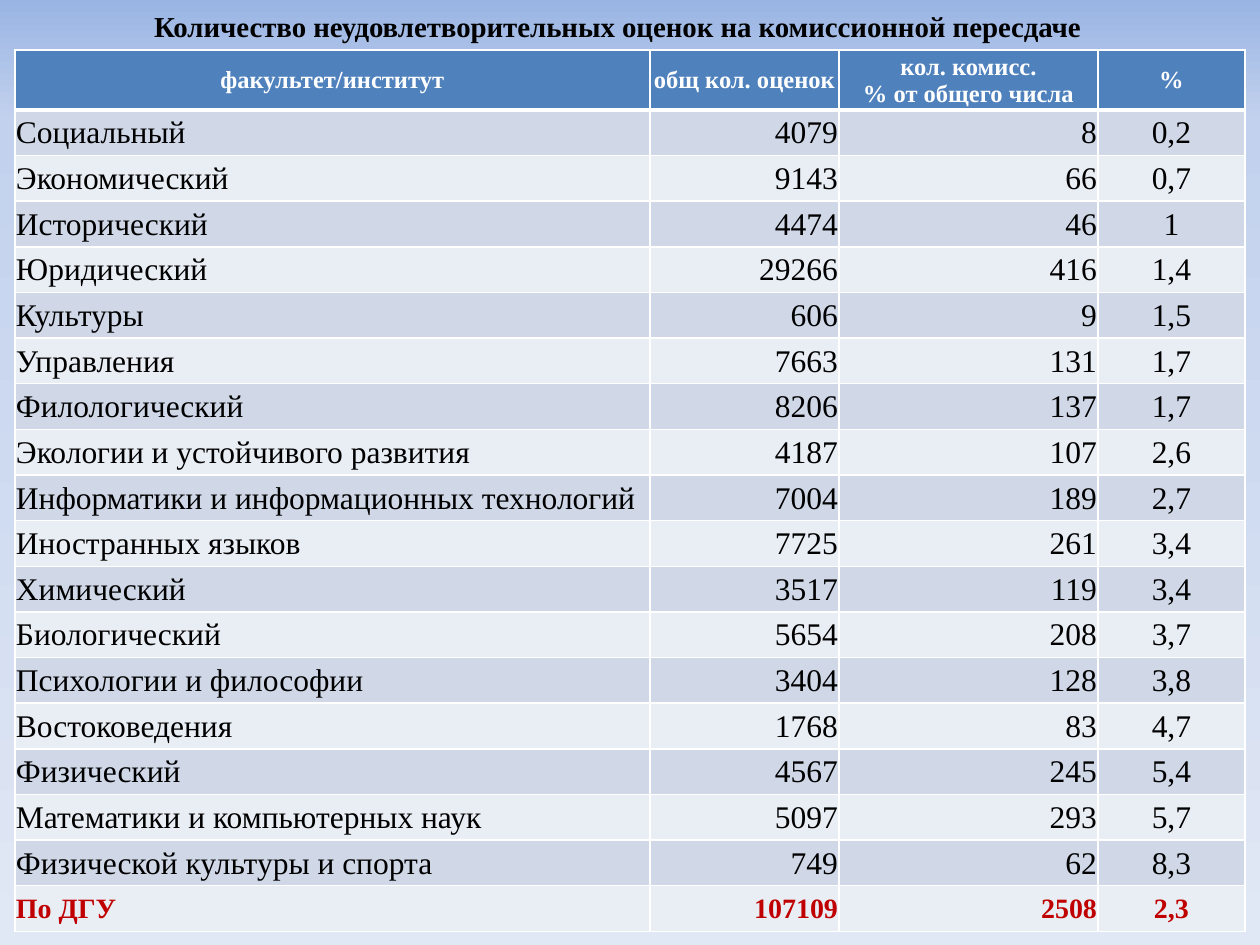
from copy import deepcopy
from dataclasses import dataclass

from lxml.etree import SubElement
from pptx import Presentation
from pptx.dml.color import RGBColor
from pptx.enum.text import MSO_ANCHOR as Anchor, MSO_AUTO_SIZE as AutoSize, PP_ALIGN as Align
from pptx.oxml.ns import qn
from pptx.slide import Slide
from pptx.table import _Cell as Cell
from pptx.text.text import TextFrame
from pptx.util import Emu, Pt

EMU_PER_PX = 914400 / 126


@dataclass(frozen=True)
class TextStyle:
    size: float
    color: str
    bold: bool


@dataclass(frozen=True)
class Theme:
    font: str = "Times New Roman"
    title: TextStyle = TextStyle(16.5, "000000", True)
    header: TextStyle = TextStyle(14, "FFFFFF", True)
    body: TextStyle = TextStyle(18, "000000", False)
    total: TextStyle = TextStyle(16, "C00000", True)
    header_fill: str = "4F81BD"
    bands: tuple[str, str] = ("D0D8E8", "E9EDF4")
    border: str = "FFFFFF"
    thin: float = 1
    thick: float = 3
    background: tuple[tuple[float, str], ...] = ((0, "9AB5E4"), (0.13, "C2D1ED"), (1, "E1E8F5"))


@dataclass(frozen=True)
class Column:
    heading: str
    width: int
    alignment: Align


@dataclass(frozen=True)
class Faculty:
    name: str
    grades: int
    failed: int
    percent: str

    def texts(self) -> tuple[str, ...]:
        return self.name, str(self.grades), str(self.failed), self.percent


THEME = Theme()
TITLE = "Количество неудовлетворительных оценок на комиссионной пересдаче"
TABLE_LEFT, TABLE_TOP, TABLE_HEIGHT, HEADER_HEIGHT = 15, 50, 881, 59
COLUMNS = (
    Column("факультет/институт", 635, Align.LEFT),
    Column("общ кол. оценок", 189, Align.RIGHT),
    Column("кол. комисс.\n% от общего числа", 259, Align.RIGHT),
    Column("%", 147, Align.CENTER),
)
FACULTIES = (
    Faculty("Социальный", 4079, 8, "0,2"),
    Faculty("Экономический", 9143, 66, "0,7"),
    Faculty("Исторический", 4474, 46, "1"),
    Faculty("Юридический", 29266, 416, "1,4"),
    Faculty("Культуры", 606, 9, "1,5"),
    Faculty("Управления", 7663, 131, "1,7"),
    Faculty("Филологический", 8206, 137, "1,7"),
    Faculty("Экологии и устойчивого развития", 4187, 107, "2,6"),
    Faculty("Информатики и информационных технологий", 7004, 189, "2,7"),
    Faculty("Иностранных языков", 7725, 261, "3,4"),
    Faculty("Химический", 3517, 119, "3,4"),
    Faculty("Биологический", 5654, 208, "3,7"),
    Faculty("Психологии и философии", 3404, 128, "3,8"),
    Faculty("Востоковедения", 1768, 83, "4,7"),
    Faculty("Физический", 4567, 245, "5,4"),
    Faculty("Математики и компьютерных наук", 5097, 293, "5,7"),
    Faculty("Физической культуры и спорта", 749, 62, "8,3"),
)
TOTAL = Faculty("По ДГУ", 107109, 2508, "2,3")


def px(length: float) -> Emu:
    return Emu(round(length * EMU_PER_PX))


def rgb(color: str) -> RGBColor:
    return RGBColor.from_string(color)


def write_text(frame: TextFrame, text: str, style: TextStyle, alignment: Align) -> None:
    frame.text = text
    for paragraph in frame.paragraphs:
        paragraph.alignment = alignment
        paragraph.font.name = THEME.font
        paragraph.font.size = Pt(style.size)
        paragraph.font.bold = style.bold
        paragraph.font.color.rgb = rgb(style.color)


def paint_background(slide: Slide) -> None:
    fill = slide.background.fill
    fill.gradient()
    fill.gradient_angle = 270
    stop_list = slide.element.find(".//" + qn("a:gsLst"))
    stop_list.append(deepcopy(stop_list[-1]))
    for stop, (position, color) in zip(fill.gradient_stops, THEME.background):
        stop.position = position
        stop.color.rgb = rgb(color)


def add_title(slide: Slide) -> None:
    box = slide.shapes.add_textbox(px(0), px(3), px(1235), px(47))
    frame = box.text_frame
    frame.word_wrap = True
    frame.auto_size = AutoSize.SHAPE_TO_FIT_TEXT
    write_text(frame, TITLE, THEME.title, Align.CENTER)


def add_borders(cell: Cell, top: float, bottom: float) -> None:
    properties = cell._tc.get_or_add_tcPr()
    widths = {"a:lnL": THEME.thin, "a:lnR": THEME.thin, "a:lnT": top, "a:lnB": bottom}
    for tag, width in widths.items():
        line = SubElement(properties, qn(tag), w=str(Pt(width)))
        SubElement(SubElement(line, qn("a:solidFill")), qn("a:srgbClr"), val=THEME.border)


def fill_cell(cell: Cell, text: str, style: TextStyle, alignment: Align, fill: str,
              top: float, bottom: float) -> None:
    cell.margin_left = cell.margin_top = cell.margin_right = px(1)
    cell.margin_bottom = 0
    cell.vertical_anchor = Anchor.MIDDLE
    add_borders(cell, top, bottom)
    cell.fill.solid()
    cell.fill.fore_color.rgb = rgb(fill)
    write_text(cell.text_frame, text, style, alignment)


def add_grades_table(slide: Slide) -> None:
    records = FACULTIES + (TOTAL,)
    width = sum(column.width for column in COLUMNS)
    table = slide.shapes.add_table(
        len(records) + 1, len(COLUMNS), px(TABLE_LEFT), px(TABLE_TOP), px(width), px(TABLE_HEIGHT)
    ).table
    table.horz_banding = False
    for row in table.rows:
        row.height = px((TABLE_HEIGHT - HEADER_HEIGHT) / len(records))
    table.rows[0].height = px(HEADER_HEIGHT)
    for index, column in enumerate(COLUMNS):
        table.columns[index].width = px(column.width)
        fill_cell(table.cell(0, index), column.heading, THEME.header, Align.CENTER,
                  THEME.header_fill, THEME.thin, THEME.thick)
    for row_index, record in enumerate(records, start=1):
        style = THEME.total if record is TOTAL else THEME.body
        top = THEME.thick if row_index == 1 else THEME.thin
        fill = THEME.bands[(row_index - 1) % 2]
        for index, (column, text) in enumerate(zip(COLUMNS, record.texts())):
            fill_cell(table.cell(row_index, index), text, style, column.alignment,
                      fill, top, THEME.thin)


def main() -> None:
    presentation = Presentation()
    presentation.slide_width, presentation.slide_height = px(1260), px(945)
    slide = presentation.slides.add_slide(presentation.slide_layouts[6])
    paint_background(slide)
    add_title(slide)
    add_grades_table(slide)
    presentation.save("out.pptx")


if __name__ == "__main__":
    main()
